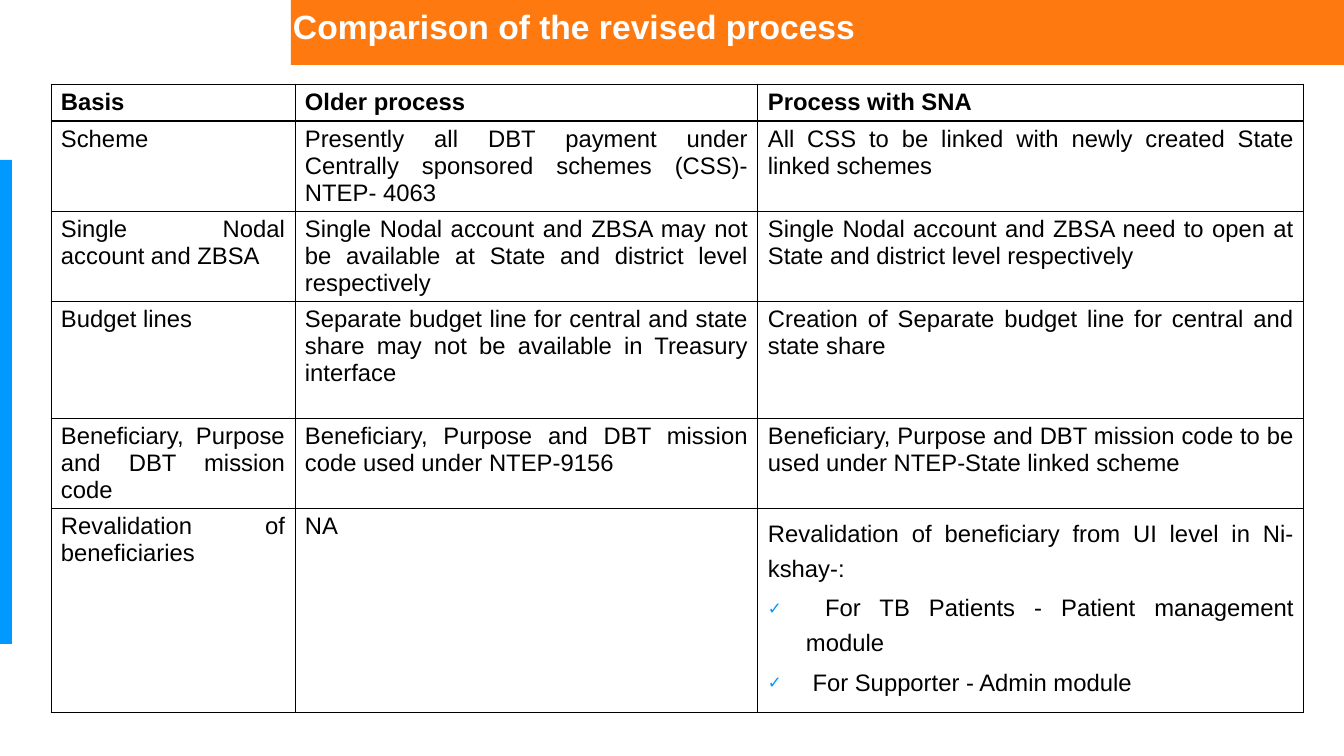
from dataclasses import dataclass

from lxml.etree import SubElement
from pptx import Presentation
from pptx.dml.color import RGBColor
from pptx.enum.shapes import MSO_SHAPE
from pptx.enum.text import MSO_ANCHOR, MSO_AUTO_SIZE, PP_ALIGN
from pptx.oxml.ns import qn
from pptx.util import Emu, Pt

EMU_PER_INCH = 914400
PX_PER_INCH = 100.8


@dataclass(frozen=True)
class Theme:
    """Colours and type sizes of the slide."""
    orange: str = "FE7A10"
    blue: str = "0099FF"
    white: str = "FFFFFF"
    black: str = "000000"
    font: str = "Arial"
    title_size: int = 24
    body_size: int = 17
    rule: float = 0.75
    header_rule: float = 1.5
    check: str = "✓"
    check_percent: int = 70


THEME = Theme()
COLUMNS = (244, 463, 546)
ROWS = (37, 90, 90, 117, 90, 204)
COMPARISON = (
    ("Basis", "Older process", "Process with SNA"),
    ("Scheme",
     "Presently all DBT payment under Centrally sponsored schemes (CSS)-NTEP- 4063",
     "All CSS to be linked with newly created State linked schemes"),
    ("Single Nodal account and ZBSA",
     "Single Nodal account and ZBSA may not be available at State and district level respectively",
     "Single Nodal account and ZBSA need to open at State and district level respectively"),
    ("Budget lines",
     "Separate budget line for central and state share may not be available in Treasury interface",
     "Creation of Separate budget line for central and state share"),
    ("Beneficiary, Purpose and DBT mission code",
     "Beneficiary, Purpose and DBT mission code used under NTEP-9156",
     "Beneficiary, Purpose and DBT mission code to be used under NTEP-State linked scheme"),
    ("Revalidation of beneficiaries", "NA",
     "Revalidation of beneficiary from UI level in Ni-kshay-:"),
)
MODULES = (
    " For TB Patients - Patient management module",
    " For Supporter - Admin module",
)


def px(length):
    """Turn slide pixels into EMU."""
    return Emu(round(length * EMU_PER_INCH / PX_PER_INCH))


def apply(target, values):
    """Set each named attribute on the target."""
    for name, value in values.items():
        setattr(target, name, value)


def write(paragraph, text, size, colour, bold=False):
    """Write one formatted run into a paragraph."""
    run = paragraph.add_run()
    run.text = text
    apply(run.font, {"name": THEME.font, "size": Pt(size), "bold": bold})
    run.font.color.rgb = RGBColor.from_string(colour)


def add_bar(slide, box, colour):
    """Draw a plain coloured bar in the given box."""
    bar = slide.shapes.add_shape(MSO_SHAPE.RECTANGLE, *map(px, box))
    bar.shadow.inherit = False
    bar.fill.solid()
    bar.fill.fore_color.rgb = RGBColor.from_string(colour)
    bar.line.fill.background()


def add_heading(slide, box):
    """Place the title on an orange band that fills the box."""
    left, top, width, height = box
    add_bar(slide, box, THEME.orange)
    title = slide.shapes.title
    tree = title._element.getparent()
    tree.append(title._element)
    apply(title, {"left": px(left - 8), "top": px(top + 1),
                  "width": px(width + 8), "height": px(height + 18)})
    apply(title.text_frame, {
        "word_wrap": True, "auto_size": MSO_AUTO_SIZE.NONE,
        "vertical_anchor": MSO_ANCHOR.TOP,
        "margin_left": px(10), "margin_right": px(10),
        "margin_top": px(5), "margin_bottom": px(5)})
    heading = title.text_frame.paragraphs[0]
    heading.alignment = PP_ALIGN.LEFT
    write(heading, "Comparison of the revised process",
          THEME.title_size, THEME.white, True)


def style_cell(cell, top_rule, bottom_rule):
    """Give a cell black borders, a white fill and margins."""
    properties = cell._tc.get_or_add_tcPr()
    rules = {"lnL": THEME.rule, "lnR": THEME.rule, "lnT": top_rule, "lnB": bottom_rule}
    for side, width in rules.items():
        border = SubElement(properties, qn(f"a:{side}"), w=str(Pt(width)))
        fill = SubElement(border, qn("a:solidFill"))
        SubElement(fill, qn("a:srgbClr"), val=THEME.black)
    cell.fill.solid()
    cell.fill.fore_color.rgb = RGBColor.from_string(THEME.white)
    apply(cell, {"margin_left": px(10), "margin_right": px(10),
                 "margin_top": px(5), "margin_bottom": px(5),
                 "vertical_anchor": MSO_ANCHOR.TOP})


def add_check(paragraph):
    """Give a paragraph a blue check mark and a hanging indent."""
    properties = paragraph._p.get_or_add_pPr()
    properties.set("marL", str(px(38)))
    properties.set("indent", str(-px(38)))
    colour = SubElement(properties, qn("a:buClr"))
    SubElement(colour, qn("a:srgbClr"), val=THEME.blue)
    SubElement(properties, qn("a:buSzPct"), val=str(THEME.check_percent * 1000))
    SubElement(properties, qn("a:buFont"), typeface=THEME.font)
    SubElement(properties, qn("a:buChar"), char=THEME.check)


def add_modules(cell):
    """Add the checked list of modules below the cell's opening line."""
    frame = cell.text_frame
    frame.paragraphs[0].line_spacing = 1.3
    for module in MODULES:
        item = frame.add_paragraph()
        add_check(item)
        apply(item, {"alignment": PP_ALIGN.JUSTIFY, "line_spacing": 1.3,
                     "space_before": Pt(THEME.body_size * 0.2)})
        write(item, module, THEME.body_size, THEME.black)


def add_comparison(slide, left, top):
    """Build the comparison table from its top left corner."""
    table = slide.shapes.add_table(
        len(ROWS), len(COLUMNS), px(left), px(top),
        px(sum(COLUMNS)), px(sum(ROWS))).table
    table.horz_banding = False
    for column, width in zip(table.columns, COLUMNS):
        column.width = px(width)
    for index, (row, height, entries) in enumerate(zip(table.rows, ROWS, COMPARISON)):
        row.height = px(height)
        is_header = index == 0
        top_rule = THEME.header_rule if index == 1 else THEME.rule
        bottom_rule = THEME.header_rule if is_header else THEME.rule
        for cell, entry in zip(row.cells, entries):
            style_cell(cell, top_rule, bottom_rule)
            paragraph = cell.text_frame.paragraphs[0]
            paragraph.alignment = PP_ALIGN.LEFT if is_header else PP_ALIGN.JUSTIFY
            write(paragraph, entry, THEME.body_size, THEME.black, is_header)
    add_modules(table.cell(len(ROWS) - 1, len(COLUMNS) - 1))


def main():
    """Build and save the comparison slide."""
    deck = Presentation()
    apply(deck, {"slide_width": px(1344), "slide_height": px(756)})
    slide = deck.slides.add_slide(deck.slide_layouts.get_by_name("Title Only"))
    add_heading(slide, (291, 0, 1053, 65))
    add_bar(slide, (0, 160, 12, 484), THEME.blue)
    add_comparison(slide, 51, 84)
    deck.save("out.pptx")


if __name__ == "__main__":
    main()
